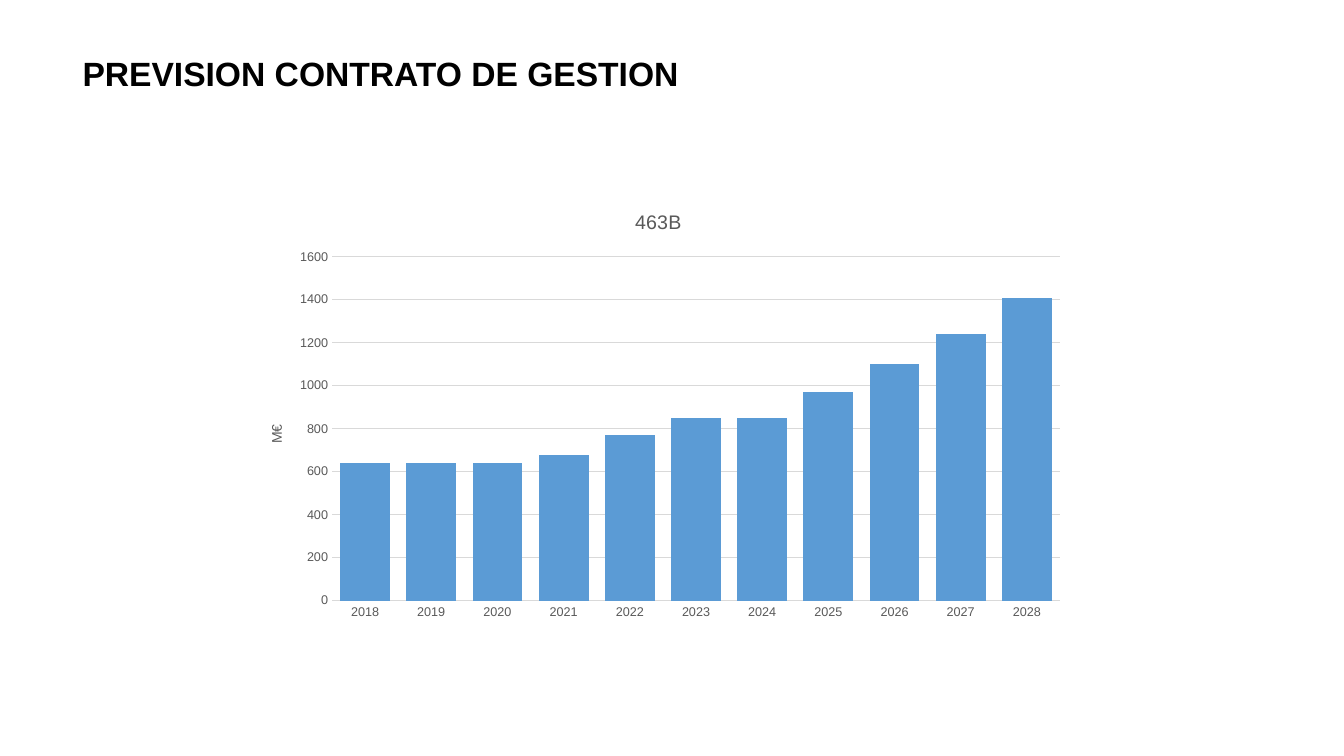
from lxml.etree import SubElement
from pptx import Presentation
from pptx.chart.data import CategoryChartData
from pptx.dml.color import RGBColor
from pptx.enum.chart import XL_CHART_TYPE as ChartType, XL_TICK_MARK as Tick
from pptx.enum.text import MSO_AUTO_SIZE as AutoSize
from pptx.oxml.ns import qn
from pptx.util import Inches, Pt

HEADING = "PREVISION CONTRATO DE GESTION"
CHART_TITLE = "463B"
UNIT = "M€"
FORECAST = {
    2018: 640, 2019: 640, 2020: 640, 2021: 680, 2022: 770, 2023: 850,
    2024: 850, 2025: 970, 2026: 1100, 2027: 1240, 2028: 1410,
}
HEADING_BOX = (0.72, 0.48, 6.62, 0.5)
CHART_BOX = (2.38, 1.9, 8.3, 4.32)
PLOT_AREA = {"x": 0.11, "y": 0.15, "w": 0.87, "h": 0.79}
UNIT_PLACE = {"x": 0.03, "y": 0.53}
THEME = {
    "font": "Arial", "ink": "000000", "label": "595959", "grid": "D9D9D9",
    "bar": "5B9BD5", "heading": 24, "title": 14, "unit": 10, "tick": 9, "line": 0.75,
}


def color(name):
    return RGBColor.from_string(THEME[name])


def style_font(font, size, ink, bold=False):
    font.name = THEME["font"]
    font.size = Pt(THEME[size])
    font.bold = bold
    font.color.rgb = color(ink)


def style_line(line):
    line.color.rgb = color("grid")
    line.width = Pt(THEME["line"])


def add_run(p, text, size, ink, bold=False):
    r = p.add_run()
    r.text = text
    style_font(r.font, size, ink, bold)


def place(parent, index, position):
    for old in parent.findall(qn("c:layout")):
        parent.remove(old)
    layout = SubElement(parent, qn("c:layout"))
    parent.insert(index, layout)
    manual = SubElement(layout, qn("c:manualLayout"))
    if "w" in position:
        SubElement(manual, qn("c:layoutTarget")).set("val", "inner")
    for side in ("x", "y"):
        SubElement(manual, qn(f"c:{side}Mode")).set("val", "edge")
    for key, value in position.items():
        SubElement(manual, qn(f"c:{key}")).set("val", str(value))


def add_heading(slide):
    sp = slide.shapes.add_textbox(*map(Inches, HEADING_BOX))
    tf = sp.text_frame
    tf.word_wrap = True
    tf.auto_size = AutoSize.SHAPE_TO_FIT_TEXT
    add_run(tf.paragraphs[0], HEADING, "heading", "ink", True)


def add_forecast(slide):
    data = CategoryChartData()
    data.categories = [str(year) for year in FORECAST]
    data.add_series(CHART_TITLE, FORECAST.values())
    chart = slide.shapes.add_chart(
        ChartType.COLUMN_CLUSTERED, *map(Inches, CHART_BOX), data).chart
    style_font(chart.font, "unit", "ink")
    chart.has_legend = False
    chart.has_title = True
    add_run(chart.chart_title.text_frame.paragraphs[0], CHART_TITLE, "title", "label")

    plot = chart.plots[0]
    plot.gap_width = 33
    plot.overlap = -30
    plot.vary_by_categories = False
    fill = plot.series[0].format.fill
    fill.solid()
    fill.fore_color.rgb = color("bar")

    years, amounts = chart.category_axis, chart.value_axis
    for axis in (years, amounts):
        axis.major_tick_mark = axis.minor_tick_mark = Tick.NONE
        style_font(axis.tick_labels.font, "tick", "label")
    style_line(years.format.line)
    amounts.format.line.fill.background()
    amounts.minimum_scale, amounts.maximum_scale, amounts.major_unit = 0, 1600, 200
    amounts.has_major_gridlines = True
    style_line(amounts.major_gridlines.format.line)
    amounts.has_title = True
    tf = amounts.axis_title.text_frame
    add_run(tf.paragraphs[0], UNIT, "unit", "label")
    body = amounts.axis_title._element.find(".//" + qn("a:bodyPr"))
    body.set("rot", "-5400000")
    body.set("vert", "horz")

    place(plot._element.getparent(), 0, PLOT_AREA)
    place(amounts.axis_title._element, 1, UNIT_PLACE)


def main():
    prs = Presentation()
    prs.slide_width, prs.slide_height = Inches(13.33), Inches(7.5)
    slide = prs.slides.add_slide(prs.slide_layouts[6])
    add_forecast(slide)
    add_heading(slide)
    prs.save("out.pptx")


if __name__ == "__main__":
    main()
